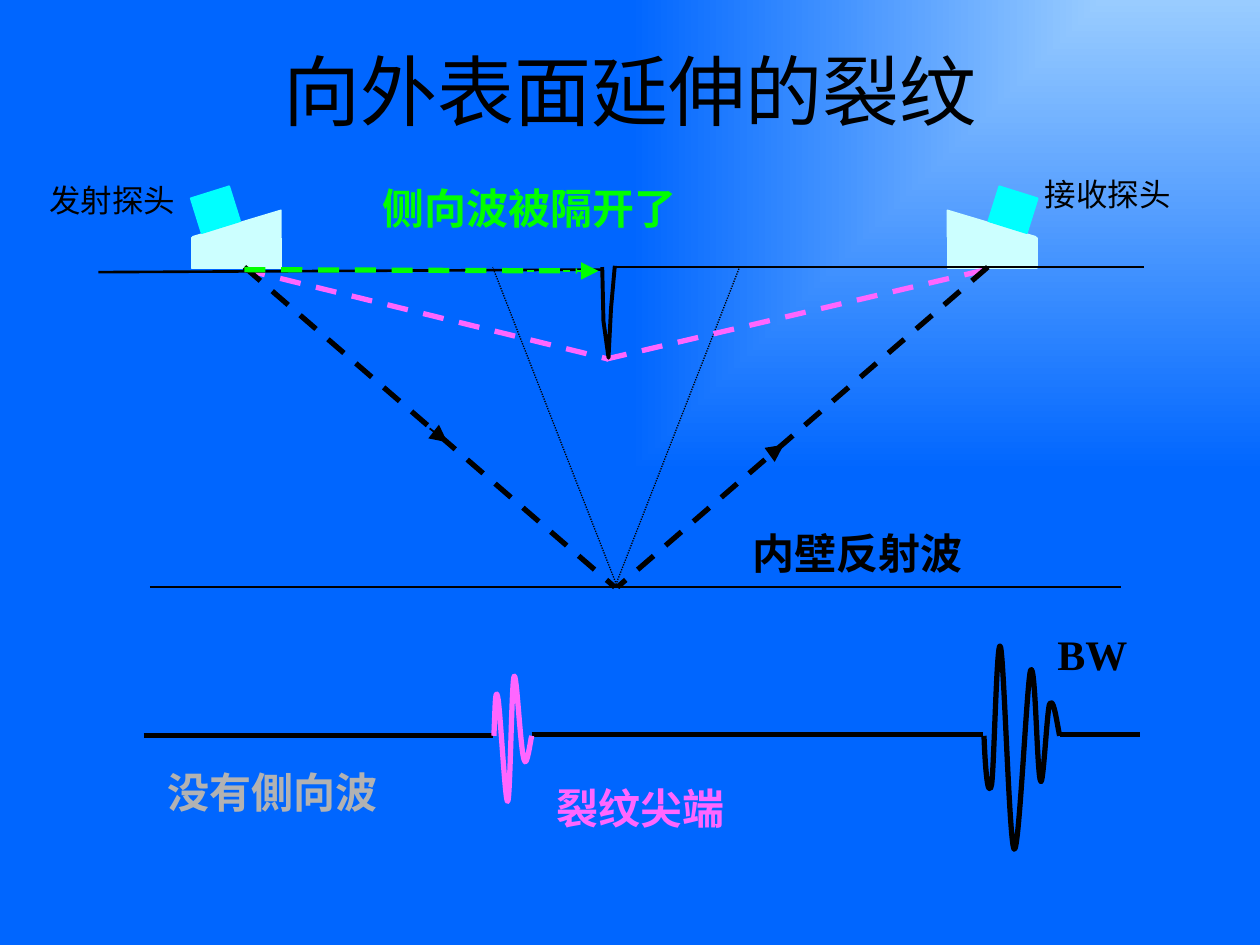
from lxml.etree import SubElement
from pptx import Presentation
from pptx.dml.color import RGBColor
from pptx.enum.dml import MSO_LINE
from pptx.enum.shapes import MSO_CONNECTOR, MSO_SHAPE
from pptx.enum.text import MSO_ANCHOR, MSO_AUTO_SIZE, PP_ALIGN
from pptx.oxml.ns import qn
from pptx.util import Inches, Pt

FONT = "Times New Roman"
BLACK, PINK, GREEN, GRAY = "000000", "FF66FF", "00FF00", "B2B2B2"
PALE, CYAN = "CCFFFF", "00FFFF"
DASH, DOT = MSO_LINE.DASH, MSO_LINE.ROUND_DOT
TITLE = "向外表面延伸的裂纹"
MIRROR_AXIS = 4.875

LABELS = [
    ("发射探头", 0.29, 1.39, 1.2, 0.4, 18, BLACK, False),
    ("接收探头", 8.19, 1.34, 1.2, 0.4, 18, BLACK, False),
    ("裂纹尖端", 4.31, 6.16, 1.55, 0.5, 24, PINK, True),
    ("内壁反射波", 5.86, 4.14, 1.89, 0.5, 24, BLACK, True),
    ("BW", 8.29, 4.94, 0.76, 0.5, 24, BLACK, True),
    ("侧向波被隔开了", 2.94, 1.4, 2.53, 0.5, 24, GREEN, True),
    ("没有側向波", 1.23, 6.03, 1.87, 0.5, 24, GRAY, True),
]

PROBE = [
    (MSO_SHAPE.RECTANGLE, 1.52, 1.89, 0.71, 0.24, 0, PALE),
    (MSO_SHAPE.RIGHT_TRIANGLE, 1.53, 1.67, 0.7, 0.21, 0, PALE),
    (MSO_SHAPE.RECTANGLE, 1.55, 1.52, 0.32, 0.29, -17.4, CYAN),
]

LINES = [
    ((1.19, 4.66), (8.9, 4.66), BLACK, 1.5, None, False),
    ((4.9, 4.66), (3.91, 2.12), BLACK, 0.75, DOT, False),
    ((4.88, 4.66), (5.87, 2.12), BLACK, 0.75, DOT, False),
    ((1.14, 5.84), (3.91, 5.84), BLACK, 3, None, False),
    ((4.22, 5.83), (7.8, 5.83), BLACK, 3, None, False),
    ((8.41, 5.83), (9.05, 5.83), BLACK, 3, None, False),
    ((1.94, 2.14), (4.83, 2.85), PINK, 3, DASH, False),
    ((4.81, 2.85), (7.83, 2.14), PINK, 3, DASH, False),
    ((3.41, 3.4), (3.55, 3.51), BLACK, 1, None, True),
    ((6.15, 3.58), (6.22, 3.53), BLACK, 1, None, True),
    ((1.94, 2.12), (4.88, 4.66), BLACK, 3, DASH, False),
    ((7.84, 2.12), (4.9, 4.66), BLACK, 3, DASH, False),
    ((4.89, 2.12), (9.08, 2.12), BLACK, 1.5, None, False),
    ((4.77, 2.14), (0.78, 2.16), BLACK, 1.5, None, False),
    ((1.94, 2.14), (4.58, 2.15), GREEN, 3, DASH, False),
    ((3.99, 2.15), (4.75, 2.15), GREEN, 1, DASH, True),
]

CRACK = [(4.78, 2.12), (4.79, 2.55), (4.83, 2.84), (4.85, 2.45), (4.88, 2.11)]

TIP_WAVE = [
    (3.92, 5.84), (3.93, 5.64), (3.93, 5.44), (3.95, 5.53),
    (3.97, 5.61), (4.01, 6.39), (4.03, 6.36),
    (4.05, 6.34), (4.06, 5.43), (4.08, 5.37),
    (4.1, 5.31), (4.13, 5.95), (4.16, 6.03),
    (4.18, 6.11), (4.21, 5.88), (4.22, 5.84),
]

BACK_WALL_WAVE = [
    (7.81, 5.84), (7.82, 6.1), (7.84, 6.35), (7.87, 6.23),
    (7.89, 6.12), (7.91, 5.05), (7.94, 5.13),
    (7.97, 5.21), (8.01, 6.71), (8.05, 6.74),
    (8.09, 6.77), (8.15, 5.41), (8.18, 5.32),
    (8.22, 5.23), (8.23, 6.16), (8.26, 6.2),
    (8.28, 6.25), (8.31, 5.65), (8.33, 5.59),
    (8.36, 5.53), (8.38, 5.68), (8.41, 5.84),
]


def color(value):
    return RGBColor.from_string(value)


def style_line(line, value, width, dash=None):
    line.color.rgb = color(value)
    line.width = Pt(width)
    if dash:
        line.dash_style = dash


def style_text(text_frame, text, size, value, bold=False):
    text_frame.text = text
    text_frame.vertical_anchor = MSO_ANCHOR.MIDDLE
    paragraph = text_frame.paragraphs[0]
    paragraph.alignment = PP_ALIGN.CENTER
    font = paragraph.runs[0].font
    font.name, font.size, font.bold = FONT, Pt(size), bold
    font.color.rgb = color(value)


def add_background(slide):
    fill = slide.background.fill
    fill.gradient()
    for stop, value in zip(fill.gradient_stops, ("99CCFF", "0066FF")):
        stop.color.rgb = color(value)
    gradient = slide._element.find(".//" + qn("a:gradFill"))
    gradient.remove(gradient.find(qn("a:lin")))
    shade = SubElement(gradient, qn("a:path"), path="rect")
    SubElement(shade, qn("a:fillToRect"), l="100000", t="0", r="0", b="100000")


def add_label(slide, text, left, top, width, height, size, value, bold):
    box = slide.shapes.add_textbox(*map(Inches, (left, top, width, height)))
    style_text(box.text_frame, text, size, value, bold)
    box.text_frame.word_wrap = False
    box.text_frame.auto_size = MSO_AUTO_SIZE.SHAPE_TO_FIT_TEXT


def add_probe(slide, mirrored):
    for kind, left, top, width, height, angle, value in PROBE:
        if mirrored:
            left, angle = 2 * MIRROR_AXIS - left - width, -angle
        shape = slide.shapes.add_shape(kind, *map(Inches, (left, top, width, height)))
        shape.rotation = angle
        shape.shadow.inherit = False
        shape.fill.solid()
        shape.fill.fore_color.rgb = color(value)
        style_line(shape.line, value, 1)
        if kind == MSO_SHAPE.RIGHT_TRIANGLE and not mirrored:
            shape._element.spPr.find(qn("a:xfrm")).set("flipH", "1")


def add_line(slide, start, end, value, width, dash, arrow):
    line = slide.shapes.add_connector(MSO_CONNECTOR.STRAIGHT, *map(Inches, start + end))
    style_line(line.line, value, width, dash)
    if arrow:
        outline = line._element.spPr.find(qn("a:ln"))
        SubElement(outline, qn("a:tailEnd"), type="triangle", w="lg", len="lg")
    SubElement(line._element.spPr, qn("a:effectLst"))


def add_outline(slide, points, value, width):
    points = [(Inches(x), Inches(y)) for x, y in points]
    builder = slide.shapes.build_freeform(*points[0])
    builder.add_line_segments(points[1:], close=False)
    shape = builder.convert_to_shape()
    shape.shadow.inherit = False
    shape.fill.background()
    style_line(shape.line, value, width)
    return shape


def bend(shape):
    outline = shape._element.find(".//" + qn("a:path"))
    segments = outline.findall(qn("a:lnTo"))
    for first in range(0, len(segments), 3):
        curve = SubElement(outline, qn("a:cubicBezTo"))
        for segment in segments[first:first + 3]:
            curve.append(segment[0])
            outline.remove(segment)


def main():
    presentation = Presentation()
    presentation.slide_width, presentation.slide_height = Inches(10), Inches(7.5)
    slide = presentation.slides.add_slide(presentation.slide_layouts[5])
    add_background(slide)

    title = slide.shapes.title
    title.left, title.top, title.width, title.height = map(Inches, (0, 0, 10, 1.42))
    style_text(title.text_frame, TITLE, 44, BLACK)

    for mirrored in (False, True):
        add_probe(slide, mirrored)
    for line in LINES:
        add_line(slide, *line)
    bend(add_outline(slide, TIP_WAVE, PINK, 3))
    bend(add_outline(slide, BACK_WALL_WAVE, BLACK, 3))
    add_outline(slide, CRACK, BLACK, 2.25)
    for label in LABELS:
        add_label(slide, *label)
    presentation.save("out.pptx")


if __name__ == "__main__":
    main()
